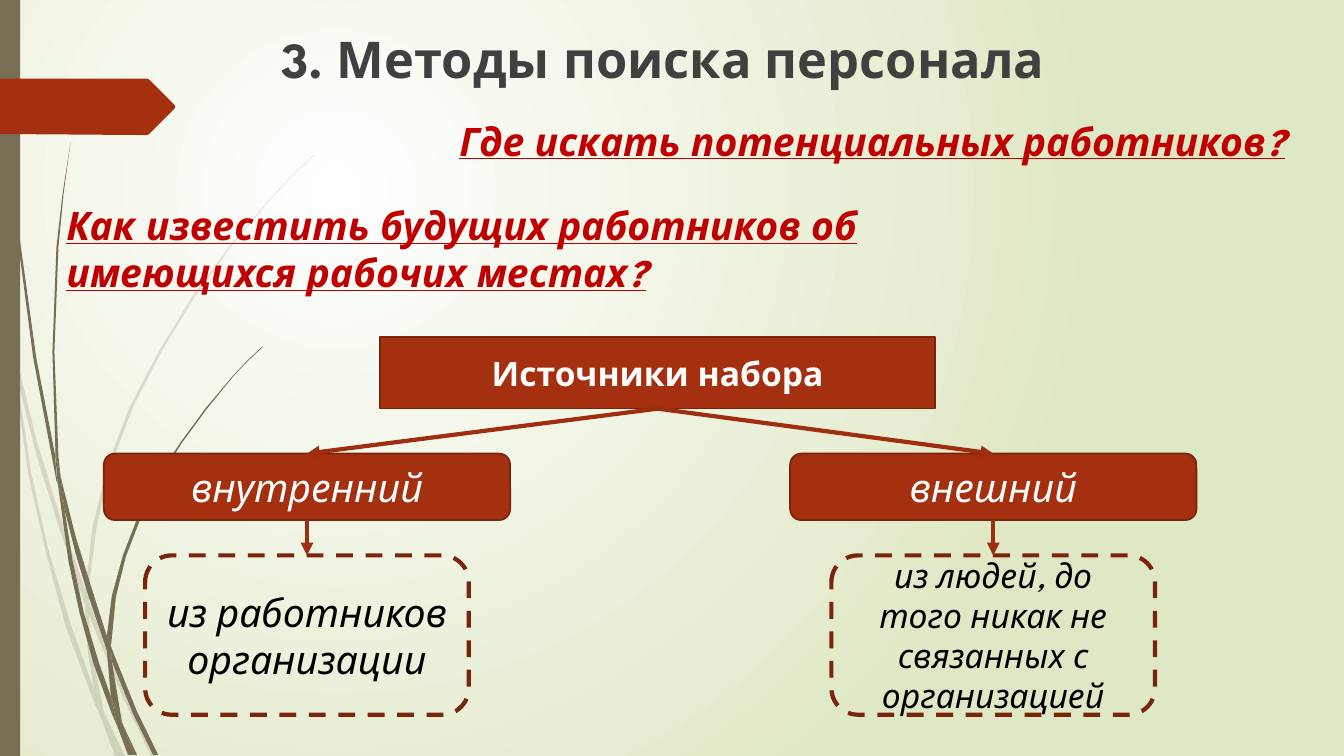
from lxml.etree import SubElement
from pptx import Presentation
from pptx.dml.color import RGBColor
from pptx.enum.dml import MSO_LINE
from pptx.enum.shapes import MSO_CONNECTOR, MSO_SHAPE as SHAPE
from pptx.enum.text import MSO_ANCHOR, MSO_AUTO_SIZE, PP_ALIGN
from pptx.oxml.ns import qn
from pptx.util import Pt

FONT = "League Spartan"
WHITE = RGBColor(0xFF, 0xFF, 0xFF)
BLACK = RGBColor(0, 0, 0)
PALE_GREEN = RGBColor(0xDF, 0xE8, 0xC4)
OLIVE = RGBColor(0x76, 0x6F, 0x54)
RUST = RGBColor(0xA5, 0x30, 0x10)
DARK_RUST = RGBColor(0x7A, 0x24, 0x0C)
ARROW_RUST = RGBColor(0x9E, 0x2E, 0x0F)
RED = RGBColor(0xC0, 0, 0)
GRAY = RGBColor(0x40, 0x40, 0x40)

TOP, BOTTOM = 0, 2

# Outlines in hundredths of an inch
OUTLINE_UNIT = Pt(0.72)
FAINT_GRASS = [
    [(11, 350), (9, 322), (0, 282), (0, 299), (10, 344)],
    [(58, 522), (84, 599), (85, 586), (62, 520), (36, 436), (14, 345), (17, 376), (36, 451)],
    [(92, 607), (88, 596), (88, 610), (123, 694), (150, 750), (155, 750), (127, 692)],
    [(119, 750), (124, 750), (105, 711)],
    [(93, 683), (70, 619), (48, 545), (31, 469), (17, 376), (11, 350), (28, 470),
     (45, 546), (65, 621), (92, 693), (101, 714), (99, 707)],
    [(84, 599), (87, 646), (93, 683), (96, 692), (105, 711), (103, 706), (91, 646),
     (88, 610), (88, 608)],
    [(88, 584), (96, 522), (110, 462), (132, 404), (160, 349), (193, 295), (229, 245),
     (268, 198), (290, 175), (312, 154), (312, 153), (289, 175), (268, 197), (228, 244),
     (191, 294), (158, 348), (129, 403), (107, 461), (92, 522), (85, 584), (85, 586),
     (88, 596)],
    [(101, 714), (114, 750), (119, 750)],
    [(88, 608), (88, 610), (88, 596), (85, 586), (84, 599)],
    [(96, 692), (93, 683), (99, 707), (101, 714), (119, 750), (105, 711)],
]
DARK_GRASS = [
    [(7, 110), (17, 233), (33, 355), (56, 477), (57, 481), (55, 457), (55, 453), (36, 355),
     (19, 232), (8, 109), (5, 48), (4, 0), (3, 0), (4, 48)],
    [(88, 592), (106, 645), (106, 633), (106, 631), (93, 590), (75, 532), (60, 472),
     (64, 505), (75, 549)],
    [(113, 649), (110, 641), (111, 656), (132, 708), (152, 749), (157, 749), (136, 706)],
    [(110, 691), (98, 657), (83, 607), (72, 556), (64, 505), (57, 477), (68, 557),
     (79, 608), (93, 659), (111, 708), (117, 722), (116, 717)],
    [(60, 472), (58, 453), (54, 349), (58, 245), (63, 193), (70, 141), (62, 193), (56, 245),
     (52, 349), (55, 449)],
    [(133, 749), (136, 749), (122, 719)],
    [(57, 477), (64, 505), (60, 472), (55, 449), (55, 453)],
    [(111, 633), (115, 592), (125, 552), (140, 513), (158, 476), (180, 440), (205, 406),
     (231, 374), (245, 359), (261, 344), (260, 344), (245, 358), (231, 373), (204, 405),
     (179, 439), (156, 474), (137, 512), (122, 551), (111, 591), (106, 631), (110, 641)],
    [(117, 722), (127, 749), (131, 749)],
    [(106, 645), (110, 691), (116, 706), (122, 719), (121, 716), (111, 656), (109, 651)],
    [(106, 645), (109, 651), (111, 656), (110, 641), (106, 631), (106, 633)],
    [(116, 706), (110, 691), (116, 717), (117, 722), (130, 749), (133, 749), (122, 719)],
]
RIBBON = [(173, 108), (148, 133), (146, 134), (136, 134), (0, 133), (0, 78), (146, 78),
          (148, 79), (173, 104), (174, 106)]


def paint_background(slide):
    fill = slide.background.fill
    fill.gradient()
    for stop, color in zip(fill.gradient_stops, (WHITE, PALE_GREEN)):
        stop.color.rgb = color
    gradient = slide.element.find(".//" + qn("a:gradFill"))
    gradient.remove(gradient.find(qn("a:lin")))
    circle = SubElement(gradient, qn("a:path"), path="circle")
    SubElement(circle, qn("a:fillToRect"), l="50000", t="50000", r="100000", b="100000")


def style_plain(shape, color):
    shape.shadow.inherit = False
    shape.fill.solid()
    shape.fill.fore_color.rgb = color
    shape.line.fill.background()


def add_outline(slide, points, color, opacity=100):
    builder = slide.shapes.build_freeform(*points[0], scale=OUTLINE_UNIT)
    builder.add_line_segments(points[1:], close=True)
    outline = builder.convert_to_shape()
    style_plain(outline, color)
    if opacity < 100:
        rgb = outline.element.spPr.find(".//" + qn("a:srgbClr"))
        SubElement(rgb, qn("a:alpha"), val=str(opacity * 1000))


def add_decoration(slide, height):
    for blade in FAINT_GRASS:
        add_outline(slide, blade, OLIVE, 20)
    for blade in DARK_GRASS:
        add_outline(slide, blade, OLIVE)
    style_plain(slide.shapes.add_shape(SHAPE.RECTANGLE, 0, 0, Pt(14.4), height), OLIVE)
    add_outline(slide, RIBBON, RUST)


def write(frame, text, size, color, align=PP_ALIGN.CENTER, bold=False, italic=False,
          underline=False):
    paragraph = frame.paragraphs[0]
    paragraph.text = text
    paragraph.alignment = align
    font = paragraph.font
    font.name, font.size, font.color.rgb = FONT, Pt(size), color
    font.bold, font.italic, font.underline = bold, italic, underline


def add_title(slide, left, top, width, height):
    frame = slide.shapes.add_textbox(Pt(left), Pt(top), Pt(width), Pt(height)).text_frame
    frame.word_wrap = True
    write(frame, "3. Методы поиска персонала", 36.1, GRAY, bold=True)


def add_question(slide, text, left, top, width, height, wrap):
    frame = slide.shapes.add_textbox(Pt(left), Pt(top), Pt(width), Pt(height)).text_frame
    frame.word_wrap = wrap
    frame.auto_size = MSO_AUTO_SIZE.SHAPE_TO_FIT_TEXT
    write(frame, text, 28, RED, PP_ALIGN.LEFT, bold=True, italic=True, underline=True)


def add_node(slide, kind, text, left, top, width, height, size, filled=True, **style):
    """Add a filled box, or a dashed one without fill."""
    node = slide.shapes.add_shape(kind, Pt(left), Pt(top), Pt(width), Pt(height))
    node.shadow.inherit = False
    node.line.color.rgb = DARK_RUST
    if filled:
        node.fill.solid()
        node.fill.fore_color.rgb = RUST
        node.line.width = Pt(1.25)
    else:
        node.fill.background()
        node.line.width = Pt(3)
        node.line.dash_style = MSO_LINE.DASH
    node.text_frame.word_wrap = True
    node.text_frame.vertical_anchor = MSO_ANCHOR.MIDDLE
    write(node.text_frame, text, size, WHITE if filled else BLACK, **style)
    return node


def add_arrow(slide, upper, lower):
    arrow = slide.shapes.add_connector(MSO_CONNECTOR.STRAIGHT, 0, 0, 0, 0)
    arrow.begin_connect(upper, BOTTOM)
    arrow.end_connect(lower, TOP)
    arrow.line.color.rgb = ARROW_RUST
    arrow.line.width = Pt(3)
    SubElement(arrow.line._get_or_add_ln(), qn("a:tailEnd"), type="triangle")
    SubElement(arrow.element.spPr, qn("a:effectLst"))


def add_source_tree(slide, left, top, width):
    kind_width, detail_width = 290.2, 231.2
    root = add_node(slide, SHAPE.RECTANGLE, "Источники набора",
                    left + 197.2, top, 396.8, 51.4, 24, bold=True)
    branches = [
        ("внутренний", "из работников организации", 28, left),
        ("внешний", "из людей, до того никак не связанных с организацией", 24,
         left + width - kind_width),
    ]
    for kind_text, detail_text, detail_size, x in branches:
        kind = add_node(slide, SHAPE.ROUNDED_RECTANGLE, kind_text,
                        x, top + 83.5, kind_width, 47.5, 28, italic=True)
        detail = add_node(slide, SHAPE.FLOWCHART_ALTERNATE_PROCESS, detail_text,
                          x + (kind_width - detail_width) / 2, top + 156.2,
                          detail_width, 113.8, detail_size, filled=False, italic=True)
        add_arrow(slide, root, kind)
        add_arrow(slide, kind, detail)


def main():
    deck = Presentation()
    deck.slide_width, deck.slide_height = Pt(960), Pt(540)
    slide = deck.slides.add_slide(deck.slide_layouts[6])
    paint_background(slide)
    add_decoration(slide, deck.slide_height)
    add_title(slide, 122.4, 16.6, 702, 44)
    add_question(slide, "Где искать потенциальных работников?", 321.1, 80, 607.7, 41, False)
    add_question(slide, "Как известить будущих работников об имеющихся рабочих местах?",
                 40.3, 140.4, 583.2, 75, True)
    add_source_tree(slide, 74.2, 240.5, 780.4)
    deck.save("out.pptx")


if __name__ == "__main__":
    main()
